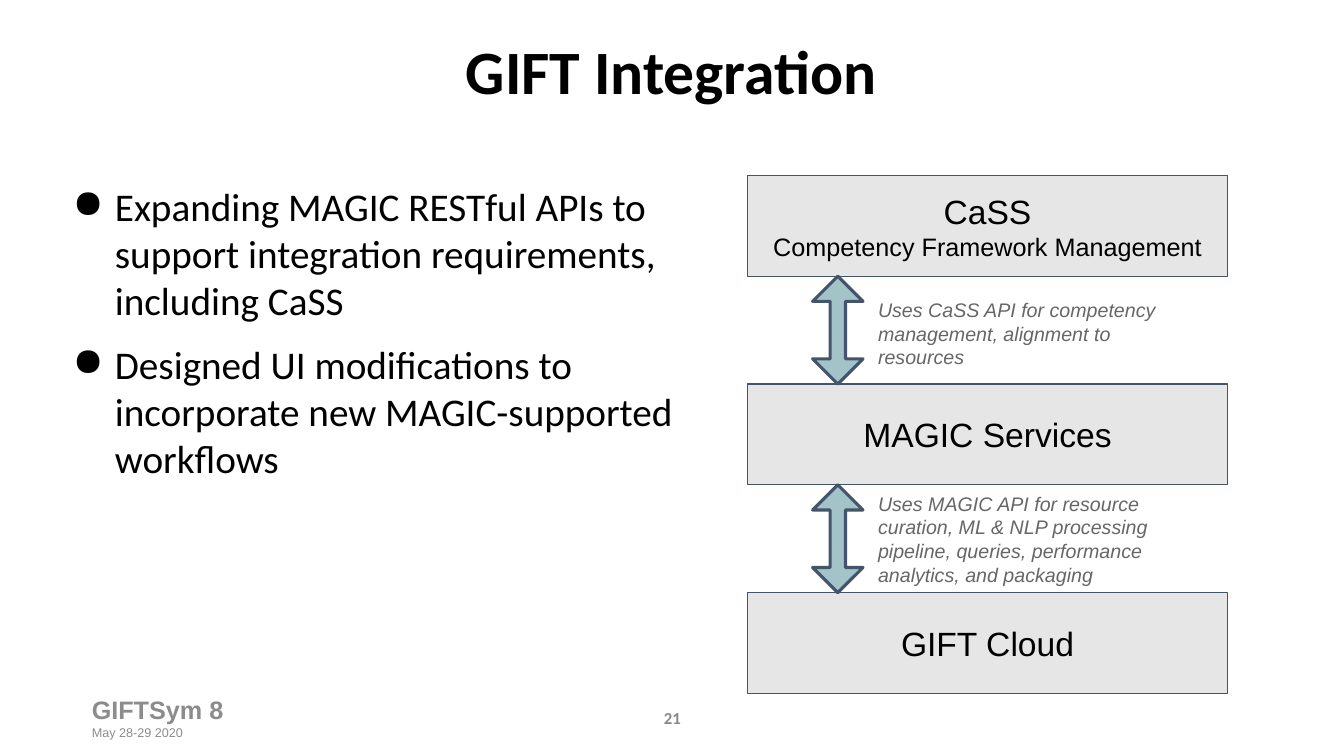
"""Build the GIFT Integration slide: bullets beside a three-layer service stack."""
from lxml import etree
from pptx import Presentation
from pptx.dml.color import RGBColor
from pptx.enum.shapes import MSO_SHAPE as Shape
from pptx.enum.text import MSO_ANCHOR as Anchor, PP_ALIGN as Align
from pptx.oxml.ns import qn
from pptx.util import Inches, Pt

BLACK = RGBColor(0x00, 0x00, 0x00)
GREY = RGBColor(0x66, 0x66, 0x66)
FOOTER_GREY = RGBColor(0x8C, 0x8C, 0x8C)
NUMBER_GREY = RGBColor(0x88, 0x88, 0x88)
LAYER_FILL = RGBColor(0xE7, 0xE6, 0xE6)
ARROW_FILL = RGBColor(0xA2, 0xC4, 0xC9)
SLATE = RGBColor(0x44, 0x54, 0x6A)


def set_frame(shape, side, top, anchor):
    frame = shape.text_frame
    frame.word_wrap = True
    frame.vertical_anchor = anchor
    frame.margin_left = frame.margin_right = Inches(side)
    frame.margin_top = frame.margin_bottom = Inches(top)
    return frame


def add_span(para, text, size, name, color, bold=False, italic=False):
    span = para.add_run()
    span.text = text
    span.font.size = Pt(size)
    span.font.name = name
    span.font.color.rgb = color
    span.font.bold = bold
    span.font.italic = italic


deck = Presentation()
deck.slide_width, deck.slide_height = Inches(13.33), Inches(7.5)
page = deck.slides.add_slide(deck.slide_layouts[5])
shapes = page.shapes

title = shapes.title
title.left, title.top = Inches(-0.01), Inches(0)
title.width, title.height = Inches(13.34), Inches(1.39)
para = set_frame(title, 0.13, 0.13, Anchor.MIDDLE).paragraphs[0]
para.alignment = Align.CENTER
add_span(para, "GIFT Integration", 44, "Calibri", BLACK, bold=True)

footer = shapes.add_textbox(Inches(0.84), Inches(6.85), Inches(2.51), Inches(0.55))
para = set_frame(footer, 0.07, 0.04, Anchor.TOP).paragraphs[0]
add_span(para, "GIFTSym 8", 18, "Arial", FOOTER_GREY, bold=True)
para.add_line_break()
add_span(para, "May 28-29 2020", 9, "Arial", FOOTER_GREY)

body = shapes.add_textbox(Inches(0.51), Inches(1.68), Inches(6.42), Inches(4.98))
frame = set_frame(body, 0.13, 0.13, Anchor.TOP)
bullets = [
    "Expanding MAGIC RESTful APIs to support integration requirements, including CaSS",
    "Designed UI modifications to incorporate new MAGIC-supported workflows",
]
for index, text in enumerate(bullets):
    para = frame.add_paragraph() if index else frame.paragraphs[0]
    para.space_after = Pt(12)
    props = para._p.get_or_add_pPr()
    props.set("marL", str(Inches(0.5)))
    props.set("indent", str(Inches(-0.42)))
    bullet_color = etree.SubElement(props, qn("a:buClr"))
    etree.SubElement(bullet_color, qn("a:srgbClr"), val=str(BLACK))
    etree.SubElement(props, qn("a:buChar"), char="●")
    add_span(para, text, 28, "Calibri", BLACK)

layers = [
    [("CaSS", 24), ("Competency Framework Management", 18)],
    [("MAGIC Services", 24)],
    [("GIFT Cloud", 24)],
]
LAYER_TOP, LAYER_HEIGHT, LAYER_PITCH = 1.74, 1, 2.07
for index, lines in enumerate(layers):
    top = LAYER_TOP + index * LAYER_PITCH
    layer = shapes.add_shape(Shape.RECTANGLE, Inches(7.41), Inches(top),
                             Inches(4.77), Inches(LAYER_HEIGHT))
    layer.shadow.inherit = False
    layer.fill.solid()
    layer.fill.fore_color.rgb = LAYER_FILL
    layer.line.color.rgb = SLATE
    layer.line.width = Pt(0.75)
    para = set_frame(layer, 0.1, 0.1, Anchor.MIDDLE).paragraphs[0]
    para.alignment = Align.CENTER
    for row, (text, size) in enumerate(lines):
        if row:
            para.add_line_break()
        add_span(para, text, size, "Arial", BLACK)

links = [
    (2.86, "Uses CaSS API for competency management, alignment to resources"),
    (4.78, "Uses MAGIC API for resource curation, ML & NLP processing pipeline, "
           "queries, performance analytics, and packaging"),
]
for index, (note_top, text) in enumerate(links):
    note = shapes.add_textbox(Inches(8.61), Inches(note_top), Inches(3.41), Inches(0.73))
    para = set_frame(note, 0.1, 0.1, Anchor.TOP).paragraphs[0]
    add_span(para, text, 14, "Arial", GREY, italic=True)

    top = LAYER_TOP + LAYER_HEIGHT + index * LAYER_PITCH
    arrow = shapes.add_shape(Shape.UP_DOWN_ARROW, Inches(8.06), Inches(top),
                             Inches(0.5), Inches(LAYER_PITCH - LAYER_HEIGHT))
    arrow.shadow.inherit = False
    arrow.adjustments[0], arrow.adjustments[1] = 0.565, 0.304
    arrow.fill.solid()
    arrow.fill.fore_color.rgb = ARROW_FILL
    arrow.line.color.rgb = SLATE
    arrow.line.width = Pt(2.25)

number = shapes.add_textbox(Inches(5.17), Inches(6.92), Inches(3), Inches(0.4))
para = set_frame(number, 0.1, 0.05, Anchor.MIDDLE).paragraphs[0]
para.alignment = Align.CENTER
add_span(para, "21", 12, "Calibri", NUMBER_GREY, bold=True)

deck.save("out.pptx")
